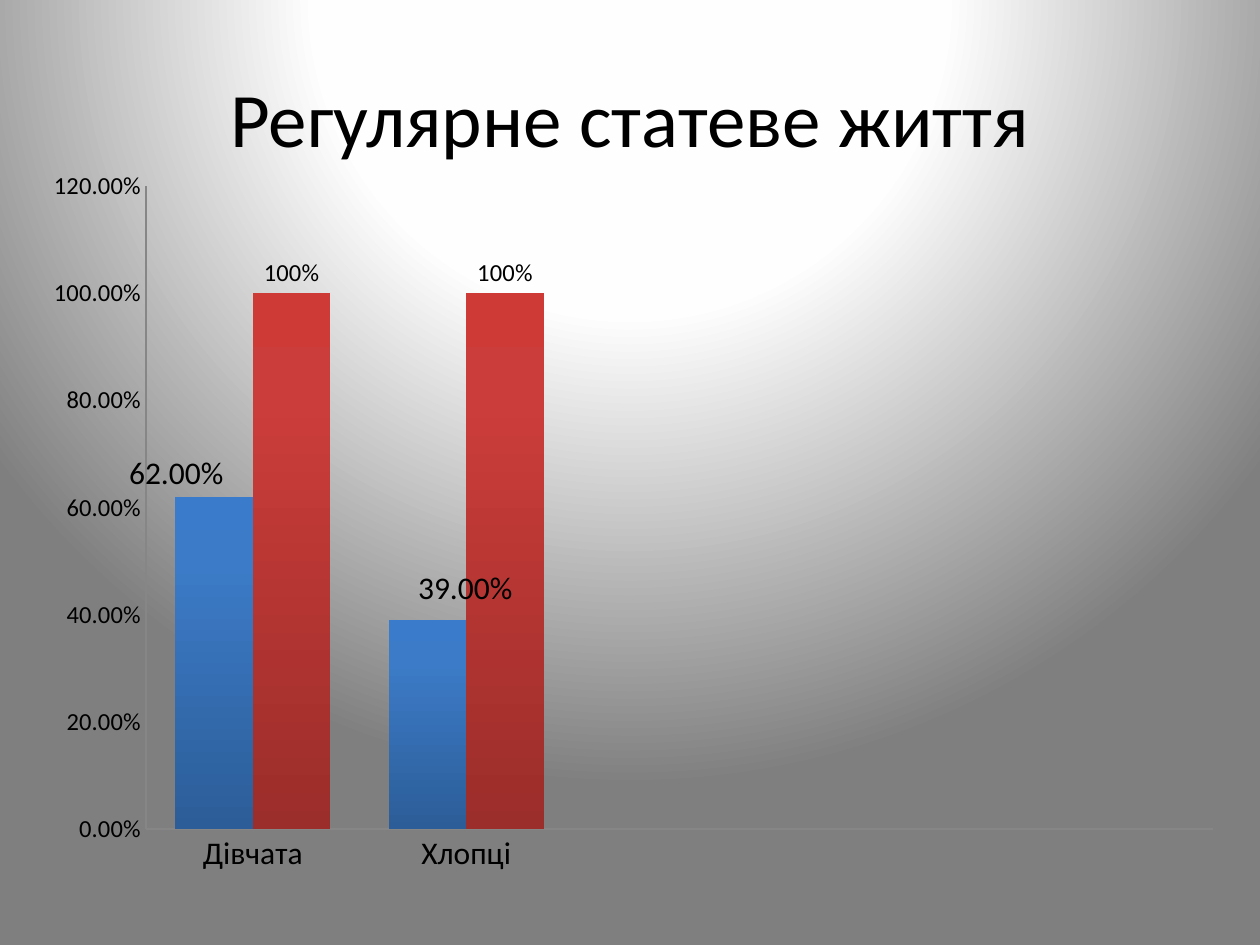
from dataclasses import dataclass

from lxml import etree
from pptx import Presentation
from pptx.chart.data import CategoryChartData
from pptx.dml.color import RGBColor
from pptx.enum.chart import XL_CHART_TYPE, XL_LABEL_POSITION, XL_TICK_MARK
from pptx.enum.text import MSO_ANCHOR, PP_ALIGN
from pptx.oxml import parse_xml
from pptx.oxml.ns import nsdecls, qn
from pptx.util import Inches, Pt


@dataclass(frozen=True)
class Theme:
    font: str = "Calibri"
    text: str = "000000"
    outline: str = "002060"
    axis: str = "868686"
    title_size: int = 44
    large_size: int = 18
    small_size: int = 14
    background: tuple = ((0, "FFFFFF"), (40, "FEFEFE"), (100, "7F7F7F"))
    blue: tuple = ((0, "2C5D98"), (80, "3C7BC7"), (100, "3A7CCB"))
    red: tuple = ((0, "9B2D2A"), (80, "CB3D3A"), (100, "CE3B37"))


THEME = Theme()
SPOTLIGHT = ('<a:path path="circle"><a:fillToRect l="50000" t="-80000" '
             'r="50000" b="180000"/></a:path>')
UPWARD = '<a:lin ang="16200000" scaled="0"/>'


def style_font(font, size):
    font.name = THEME.font
    font.size = Pt(size)
    font.color.rgb = RGBColor.from_string(THEME.text)


def set_gradient(fill, properties, stops, direction):
    """Give a fill several colour stops; properties is its parent element."""
    fill.solid()
    stop_xml = "".join(
        f'<a:gs pos="{position * 1000}"><a:srgbClr val="{color}"/></a:gs>'
        for position, color in stops)
    gradient = parse_xml(f'<a:gradFill {nsdecls("a")} rotWithShape="1">'
                         f'<a:gsLst>{stop_xml}</a:gsLst>{direction}</a:gradFill>')
    properties.replace(properties.find(qn("a:solidFill")), gradient)


def add_background(slide):
    fill = slide.background.fill
    fill.solid()
    properties = slide.element.find(".//" + qn("p:bgPr"))
    set_gradient(fill, properties, THEME.background, SPOTLIGHT)


def add_title(slide, text):
    title = slide.shapes.title
    title.left, title.top = Inches(0.5), Inches(0.3)
    title.width, title.height = Inches(9), Inches(1.25)
    title.text_frame.vertical_anchor = MSO_ANCHOR.MIDDLE
    para = title.text_frame.paragraphs[0]
    para.alignment = PP_ALIGN.CENTER
    span = para.add_run()
    span.text = text
    style_font(span.font, THEME.title_size)
    span.font._element.insert(0, parse_xml(
        f'<a:ln {nsdecls("a")} w="{Pt(0.75)}"><a:solidFill>'
        f'<a:srgbClr val="{THEME.outline}"/></a:solidFill></a:ln>'))


def manual_layout(x, y, **plot_size):
    """Return a layout: an offset alone, or an inner plot area with w and h."""
    layout = etree.Element(qn("c:layout"))
    manual = etree.SubElement(layout, qn("c:manualLayout"))
    settings = {"x": x, "y": y, **plot_size}
    if plot_size:
        settings = {"layoutTarget": "inner", "xMode": "edge", "yMode": "edge", **settings}
    for name, value in settings.items():
        etree.SubElement(manual, qn(f"c:{name}"), val=str(value))
    return layout


def place_plot(chart):
    plot_area = chart.element.find(".//" + qn("c:plotArea"))
    for layout in plot_area.findall(qn("c:layout")):
        plot_area.remove(layout)
    plot_area.insert(0, manual_layout(0.116, 0.024, w=0.847, h=0.827))


def style_axis(axis, size):
    axis.has_major_gridlines = False
    axis.major_tick_mark = axis.minor_tick_mark = XL_TICK_MARK.NONE
    axis.format.line.color.rgb = RGBColor.from_string(THEME.axis)
    axis.format.line.width = Pt(0.75)
    style_font(axis.tick_labels.font, size)


def style_series(series, stops, size, number_format):
    fill = series.format.fill
    fill.solid()
    set_gradient(fill, series._element.find(qn("c:spPr")), stops, UPWARD)
    series.format.line.fill.background()
    labels = series.data_labels
    labels.show_value = True
    labels.number_format = number_format
    labels.number_format_is_linked = False
    labels.position = XL_LABEL_POSITION.OUTSIDE_END
    style_font(labels.font, size)


def shift_label(series, index, x, y):
    label = series.points[index].data_label
    style_font(label.font, THEME.large_size)
    label.position = XL_LABEL_POSITION.OUTSIDE_END
    element = series._element.findall(".//" + qn("c:dLbl"))[index]
    element.find(qn("c:idx")).addnext(manual_layout(x, y))


def add_column_chart(slide):
    data = CategoryChartData(number_format="0.00%")
    data.categories = ["Дівчата", "Хлопці", "", "", ""]
    data.add_series("Series 1", [0.62, 0.39, None, None, None])
    data.add_series("Series 2", [1, 1, None, None, None], number_format="0%")
    chart = slide.shapes.add_chart(
        XL_CHART_TYPE.COLUMN_CLUSTERED, Inches(0), Inches(1.33),
        Inches(10), Inches(6.17), data).chart
    chart.has_title = chart.has_legend = False
    style_font(chart.font, 10)
    place_plot(chart)

    style_axis(chart.category_axis, THEME.large_size)
    value_axis = chart.value_axis
    style_axis(value_axis, THEME.small_size)
    value_axis.minimum_scale, value_axis.maximum_scale = 0, 1.2
    value_axis.major_unit = 0.2
    value_axis.tick_labels.number_format = "0.00%"
    value_axis.tick_labels.number_format_is_linked = False

    plot = chart.plots[0]
    plot.gap_width, plot.overlap = 75, 0
    plot.vary_by_categories = False
    share, total = plot.series
    style_series(share, THEME.blue, THEME.large_size, "0.00%")
    style_series(total, THEME.red, THEME.small_size, "0%")
    for index, offset in enumerate([(-0.03, 0), (0.03, -0.01)]):
        shift_label(share, index, *offset)


def main():
    deck = Presentation()
    deck.slide_width, deck.slide_height = Inches(10), Inches(7.5)
    slide = deck.slides.add_slide(deck.slide_layouts[5])
    add_background(slide)
    add_title(slide, "Регулярне статеве життя")
    add_column_chart(slide)
    deck.save("out.pptx")


if __name__ == "__main__":
    main()
